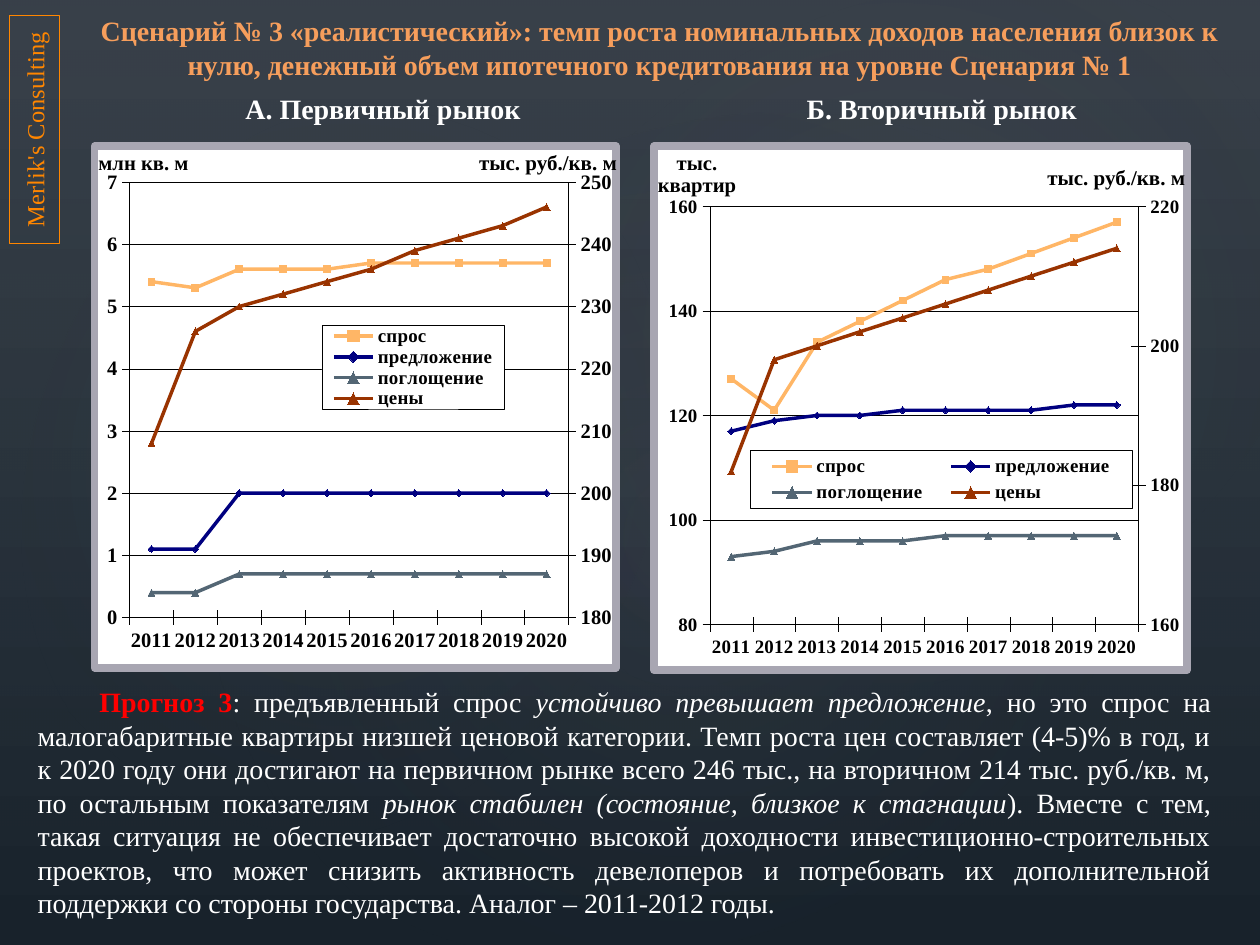
from copy import deepcopy
from pptx import Presentation, util as u
from pptx.chart.axis import CategoryAxis, ValueAxis
from pptx.chart.data import CategoryChartData
from pptx.dml.color import RGBColor
from pptx.enum import chart as ch, shapes, text
from pptx.oxml import parse_xml
from pptx.oxml.ns import nsdecls, qn

THEME = dict(
    font="Times New Roman", body=16, label=14, axis_title=12, legend=11,
    title="F69E5C", accent="FF0000", white="FFFFFF", black="000000",
    brand="FF8600", frame="A8A6B2", top="394650", bottom="17212A",
    veil="38363E", fade="283138",
)
CELL = u.Inches(0.1)  # grid: 100 columns by 75 rows


def add_text(sp, at, runs, size, align, anchor, indent=0):
    """Fill a shape with one paragraph; runs are (text, colour, bold, italic)."""
    tf = sp.text_frame
    tf.word_wrap, tf.vertical_anchor = True, anchor
    p = tf.paragraphs[0]
    p.alignment = align
    if indent:
        p._p.get_or_add_pPr().set("indent", str(int(indent * CELL)))
    for words, colour, bold, italic in runs:
        r = p.add_run()
        r.text = words
        r.font.name, r.font.size = THEME["font"], u.Pt(size)
        r.font.bold, r.font.italic = bold, italic
        r.font.color.rgb = RGBColor.from_string(colour)
    sp.left, sp.top, sp.width, sp.height = [int(v * CELL) for v in at]


def place(parent, index, *percents):
    """Set the manual layout of a chart part in percent of the chart's size."""
    for old in parent.findall(qn("c:layout")):
        parent.remove(old)
    tags = [("xMode", "edge"), ("yMode", "edge"), *zip("xywh", (v / 100 for v in percents))]
    if parent.tag == qn("c:plotArea"):
        tags.insert(0, ("layoutTarget", "inner"))
    inner = "".join(f'<c:{tag} val="{val}"/>' for tag, val in tags)
    parent.insert(index, parse_xml(
        f'<c:layout {nsdecls("c")}><c:manualLayout>{inner}</c:manualLayout></c:layout>'))


prs = Presentation()
prs.slide_width, prs.slide_height = 100 * CELL, 75 * CELL
s = prs.slides.add_slide(prs.slide_layouts[6])

# Background gradient
fill = s.background.fill
fill.gradient()
fill.gradient_angle = 270
for stop, name in zip(fill.gradient_stops, ("top", "bottom")):
    stop.color.rgb = RGBColor.from_string(THEME[name])

# Translucent veil and soft glows
LINEAR = '<a:lin ang="5400000" scaled="0"/>'
RADIAL = '<a:path path="circle"><a:fillToRect l="50000" t="50000" r="50000" b="50000"/></a:path>'
RECT, OVAL = shapes.MSO_SHAPE.RECTANGLE, shapes.MSO_SHAPE.OVAL
for kind, at, turn, name, alpha, end, end_alpha, way in (
    (RECT, (0, 0, 100, 75), 0, "veil", 36, 100, 10, LINEAR),
    (OVAL, (15, 11.4, 79.2, 62.4), 328.7, "frame", 7, 58, 0, RADIAL),
    (OVAL, (-3, 12.8, 60.6, 49), 294.3, "frame", 8, 58, 0, RADIAL),
    (OVAL, (35.8, 1.3, 70.9, 52), 328.7, "frame", 8, 58, 0, RADIAL),
):
    sp = s.shapes.add_shape(kind, *[int(v * CELL) for v in at])
    sp.rotation, sp.shadow.inherit = turn, False
    sp.line.fill.background()
    stops = "".join(
        f'<a:gs pos="{pos * 1000}"><a:srgbClr val="{THEME[c]}"><a:alpha val="{a * 1000}"/></a:srgbClr></a:gs>'
        for pos, c, a in ((0, name, alpha), (end, "fade", end_alpha)))
    sp._element.spPr.find(qn("a:prstGeom")).addnext(parse_xml(
        f'<a:gradFill {nsdecls("a")}><a:gsLst>{stops}</a:gsLst>{way}</a:gradFill>'))

# Title, chart headings and forecast
CENTER, JUSTIFY = text.PP_ALIGN.CENTER, text.PP_ALIGN.JUSTIFY
TOP, MIDDLE = text.MSO_ANCHOR.TOP, text.MSO_ANCHOR.MIDDLE
white = THEME["white"]
for at, runs, align, anchor, indent in (
    ((5.3, 0.6, 94.1, 6.4), [
        ("Сценарий № 3 «реалистический»: темп роста номинальных доходов населения близок к нулю, "
         "денежный объем ипотечного кредитования на уровне Сценария № 1", THEME["title"], True, False),
    ], CENTER, TOP, 0),
    ((10.4, 6.75, 40, 3.7), [("А. Первичный рынок", white, True, False)], CENTER, MIDDLE, 0),
    ((54.75, 6.75, 40, 3.7), [("Б. Вторичный рынок", white, True, False)], CENTER, MIDDLE, 0),
    ((2, 53.7, 95.1, 19.9), [
        ("Прогноз 3", THEME["accent"], True, False),
        (": предъявленный спрос ", white, False, False),
        ("устойчиво превышает предложение", white, False, True),
        (", но это спрос на малогабаритные квартиры низшей ценовой категории. Темп роста цен "
         "составляет (4-5)% в год, и к 2020 году они достигают на первичном рынке всего 246 тыс., "
         "на вторичном 214 тыс. руб./кв. м, по остальным показателям ", white, False, False),
        ("рынок стабилен (состояние, близкое к стагнации", white, False, True),
        ("). Вместе с тем, такая ситуация не обеспечивает достаточно высокой доходности "
         "инвестиционно-строительных проектов, что может снизить активность девелоперов и "
         "потребовать их дополнительной поддержки со стороны государства. "
         "Аналог – 2011-2012 годы.", white, False, False),
    ], JUSTIFY, MIDDLE, 4.9),
):
    add_text(s.shapes.add_textbox(0, 0, 0, 0), at, runs, THEME["body"], align, anchor, indent)

# Charts: three series on the left axis, prices on the right axis
MARK = ch.XL_MARKER_STYLE
SERIES = (  # name, line colour, marker, marker colour
    ("спрос", "FFB666", MARK.SQUARE, "FFB666"),
    ("предложение", "000080", MARK.DIAMOND, "000080"),
    ("поглощение", "536674", MARK.TRIANGLE, "536674"),
    ("цены", "993300", MARK.TRIANGLE, "800000"),
)
CHARTS = (
    dict(at=(7.2, 11.3, 42, 42), size=11.9, tick=11.9, plot=(6.7, 6.9, 84.2, 83.5),
         legend=(43.6, 34.4, 35, 16), left=("млн кв. м", 0, 7, 1), right=(180, 250, 10),
         caption=(35.5, 11.4, 16, 3),
         values=((5.4, 5.3, 5.6, 5.6, 5.6, 5.7, 5.7, 5.7, 5.7, 5.7),
                 (1.1, 1.1, 2, 2, 2, 2, 2, 2, 2, 2),
                 (0.4, 0.4, 0.7, 0.7, 0.7, 0.7, 0.7, 0.7, 0.7, 0.7),
                 (208, 226, 230, 232, 234, 236, 239, 241, 243, 246))),
    dict(at=(51.6, 11.3, 42.9, 42.2), size=12, tick=11, plot=(10.5, 11.5, 80.4, 79.8),
         legend=(18.1, 58.1, 71.6, 11), left=("тыс. квартир", 80, 160, 20), right=(160, 220, 20),
         caption=(80.6, 12.55, 16, 3),
         values=((127, 121, 134, 138, 142, 146, 148, 151, 154, 157),
                 (117, 119, 120, 120, 121, 121, 121, 121, 122, 122),
                 (93, 94, 96, 96, 96, 97, 97, 97, 97, 97),
                 (182, 198, 200, 202, 204, 206, 208, 210, 212, 214))),
)
black = RGBColor.from_string(THEME["black"])
for c in CHARTS:
    data = CategoryChartData()
    data.categories = [str(year) for year in range(2011, 2021)]
    for (name, *_), values in zip(SERIES, c["values"]):
        data.add_series(name, values)
    chart = s.shapes.add_chart(ch.XL_CHART_TYPE.LINE_MARKERS,
                               *[int(v * CELL) for v in c["at"]], data).chart
    chart.has_title = False
    chart.font.name, chart.font.size = THEME["font"], u.Pt(c["size"])
    chart.font.bold, chart.font.color.rgb = True, black
    chart.plots[0].vary_by_categories = False
    for ser, (_, colour, marker, marker_colour) in zip(chart.series, SERIES):
        ser.smooth = False
        ser.format.line.width = u.Pt(2)
        ser.format.line.color.rgb = RGBColor.from_string(colour)
        ser.marker.style, ser.marker.size = marker, 4
        for paint in (ser.marker.format.fill, ser.marker.format.line.fill):
            paint.solid()
            paint.fore_color.rgb = RGBColor.from_string(marker_colour)

    # Shared axis style
    cat, val = chart.category_axis, chart.value_axis
    val.has_major_gridlines = True
    for ax in (cat, val):
        ax.major_tick_mark = ch.XL_TICK_MARK.CROSS
        ax.minor_tick_mark = ch.XL_TICK_MARK.NONE
        f = ax.tick_labels.font
        f.name, f.size, f.bold, f.color.rgb = THEME["font"], u.Pt(c["tick"]), True, black
        ax.format.line.color.rgb, ax.format.line.width = black, u.Pt(0.25)
    val.major_gridlines.format.line.color.rgb = black
    val.major_gridlines.format.line.width = u.Pt(0.25)
    val.tick_labels.number_format, val.tick_labels.number_format_is_linked = "0", False

    # Second line group with its own pair of axes
    area = chart._chartSpace.chart.plotArea
    first = area.find(qn("c:lineChart"))
    second = deepcopy(first)
    for group, keep in ((first, slice(0, 3)), (second, slice(3, 4))):
        sers = group.findall(qn("c:ser"))
        for ser in sers:
            if ser not in sers[keep]:
                group.remove(ser)
    first.addnext(second)
    right, hidden = ValueAxis(deepcopy(val._element)), CategoryAxis(deepcopy(cat._element))
    val._element.addnext(right._element)
    right._element.addnext(hidden._element)
    for node, number in zip(second.findall(qn("c:axId")), ("5001", "5002")):
        node.set("val", number)
    for ax, own, other in ((hidden, "5001", "5002"), (right, "5002", "5001")):
        ax._element.find(qn("c:axId")).set("val", own)
        ax._element.find(qn("c:crossAx")).set("val", other)
    hidden.visible = False
    right.has_major_gridlines = False
    right._element.find(qn("c:axPos")).set("val", "r")
    right._element.find(qn("c:crosses")).set("val", "max")

    # Scales and horizontal title of the left axis
    words, *scale = c["left"]
    for ax, (low, high, step) in ((val, scale), (right, c["right"])):
        ax.minimum_scale, ax.maximum_scale, ax.major_unit = low, high, step
    tf = val.axis_title.text_frame
    tf.text = words
    f = tf.paragraphs[0].runs[0].font
    f.name, f.size, f.bold, f.color.rgb = THEME["font"], u.Pt(THEME["axis_title"]), True, black
    title = val._element.find(qn("c:title"))
    body = title.find(".//" + qn("a:bodyPr"))
    body.set("rot", "0")
    body.set("vert", "horz")
    place(title, 1, 0, 0)
    place(area, 0, *c["plot"])

    # Legend and chart frame
    chart.has_legend = True
    chart.legend.include_in_layout = False
    f = chart.legend.font
    f.name, f.size, f.bold, f.color.rgb = THEME["font"], u.Pt(THEME["legend"]), True, black
    legend = chart.legend._element
    place(legend, 1, *c["legend"])
    for before, colour, width in ((legend.find(qn("c:txPr")), "black", 0.25),
                                  (chart._chartSpace.find(qn("c:txPr")), "frame", 4.5)):
        before.addprevious(parse_xml(
            f'<c:spPr {nsdecls("c", "a")}><a:solidFill><a:srgbClr val="{white}"/></a:solidFill>'
            f'<a:ln w="{u.Pt(width)}"><a:solidFill><a:srgbClr val="{THEME[colour]}"/></a:solidFill>'
            f'<a:round/></a:ln></c:spPr>'))

    # Caption of the right axis
    add_text(s.shapes.add_textbox(0, 0, 0, 0), c["caption"],
             [("тыс. руб./кв. м", THEME["black"], True, False)], THEME["axis_title"], CENTER, MIDDLE)

# Rotated company label
sp = s.shapes.add_shape(RECT, 0, 0, 0, 0)
sp.rotation, sp.shadow.inherit = 270, False
sp.fill.background()
sp.line.color.rgb, sp.line.width = RGBColor.from_string(THEME["brand"]), u.Pt(0.75)
add_text(sp, (-6.3, 8.3, 18.1, 4), [("Merlik's Consulting", THEME["brand"], False, False)],
         THEME["label"], CENTER, MIDDLE)
sp.text_frame.margin_left = sp.text_frame.margin_right = 0

prs.save("out.pptx")
